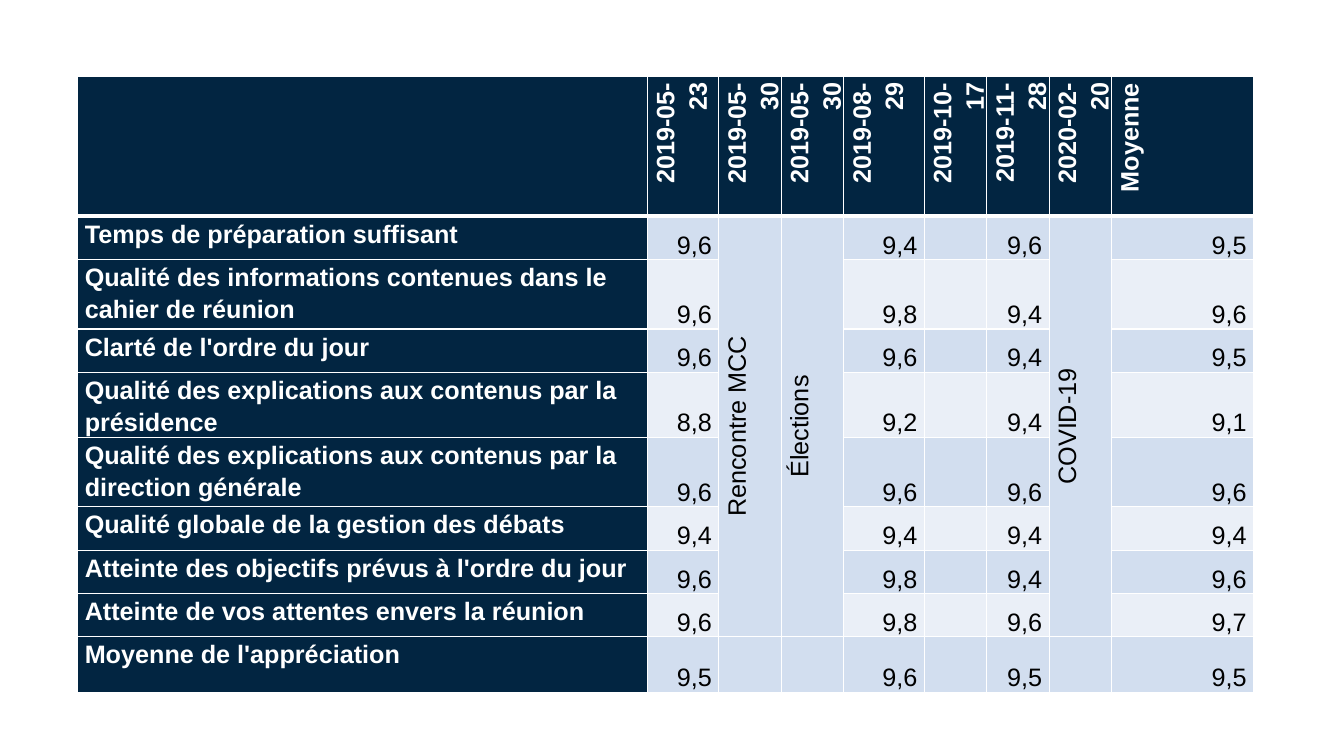
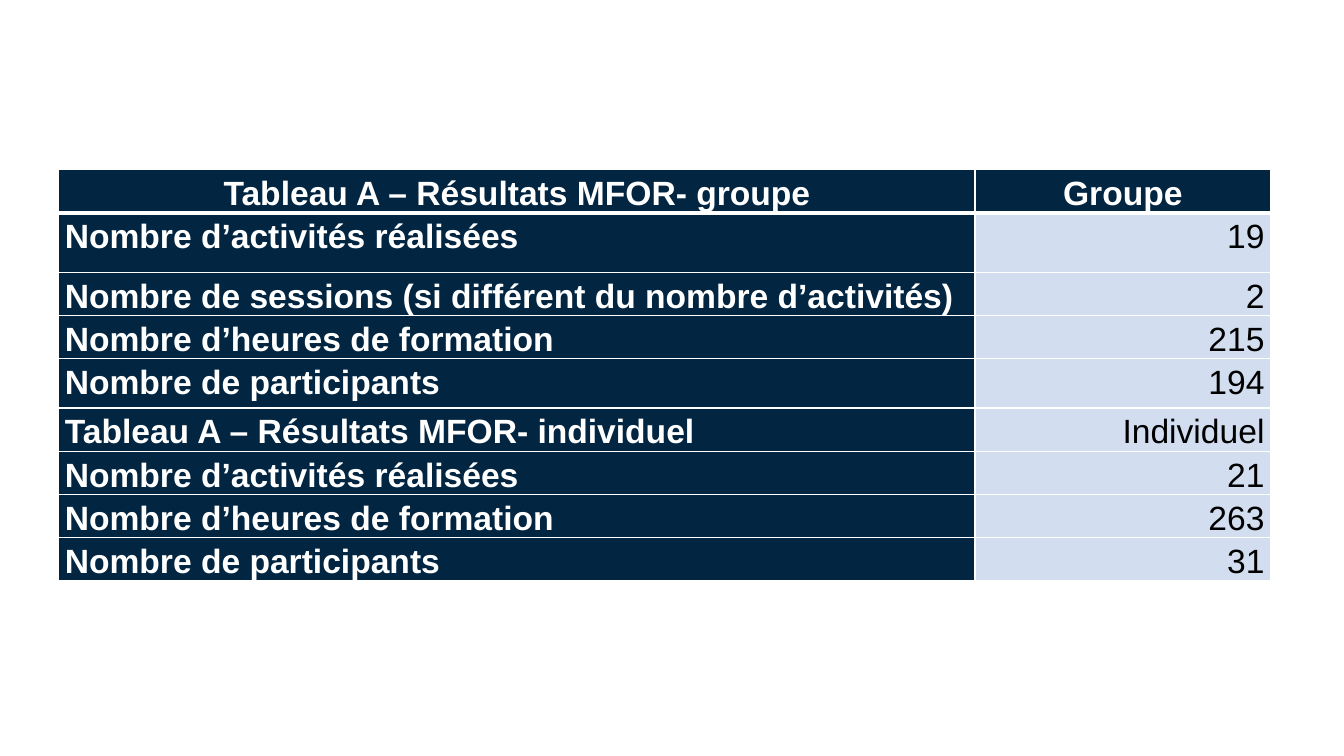
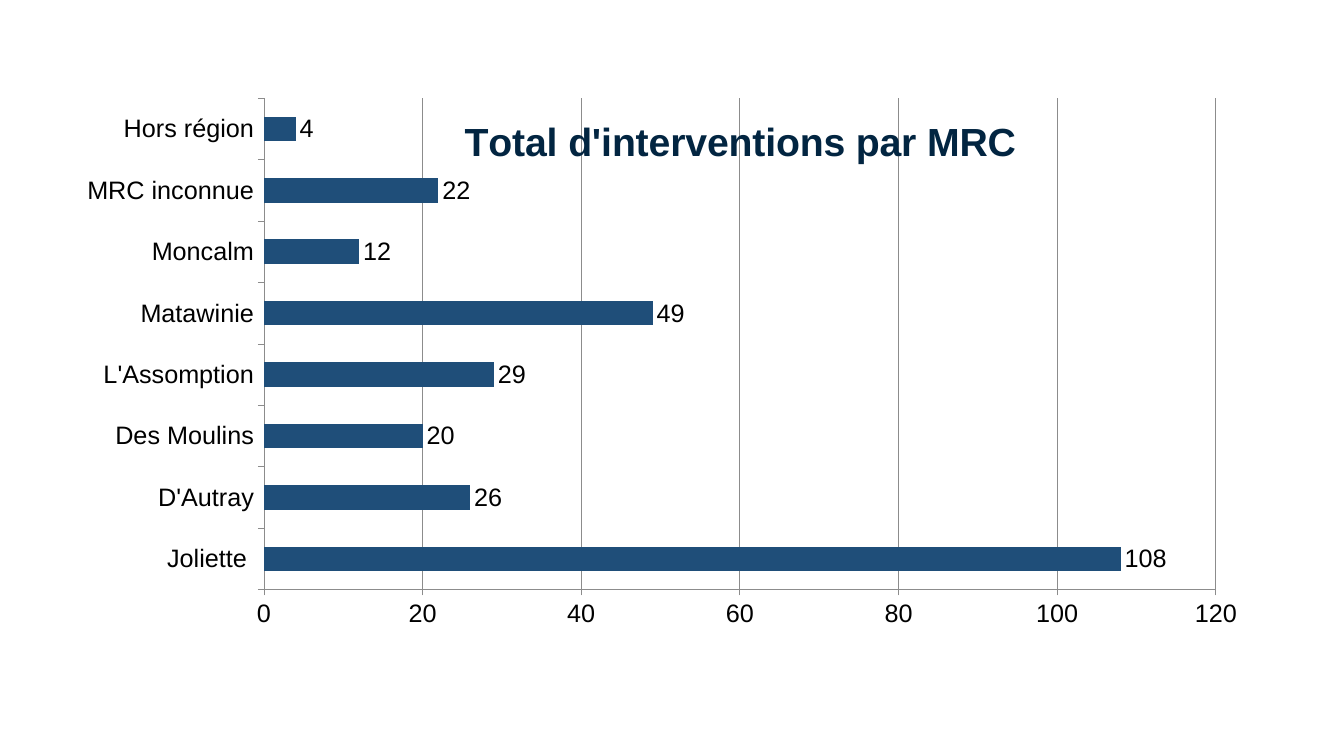
from dataclasses import dataclass

from lxml.etree import SubElement
from pptx import Presentation
from pptx.chart.data import CategoryChartData
from pptx.dml.color import RGBColor
from pptx.enum.chart import XL_CHART_TYPE, XL_LABEL_POSITION, XL_TICK_MARK
from pptx.enum.text import MSO_ANCHOR, PP_ALIGN
from pptx.oxml.ns import qn
from pptx.util import Pt


@dataclass(frozen=True)
class Theme:
    navy: str = "022541"
    blue: str = "1F4E79"
    band: str = "D2DEEF"
    pale: str = "EAEFF7"
    white: str = "FFFFFF"
    black: str = "000000"
    grey: str = "8C8C8C"
    font: str = "Arial"
    body: int = 18
    large: int = 24
    title: int = 28


theme = Theme()


def write(frame, text, size=theme.body, color=theme.black, bold=False,
          align=PP_ALIGN.LEFT, line=None, after=0):
    para = frame.paragraphs[0]
    para.alignment = align
    para.line_spacing = line
    para.space_after = Pt(after)
    run = para.add_run()
    run.text = text
    run.font.name = theme.font
    run.font.size = Pt(size)
    run.font.bold = bold
    run.font.color.rgb = RGBColor.from_string(color)


def place(host, index, **box):
    """Give a chart part a manual layout, as fractions of the chart."""
    for old in host.findall(qn("c:layout")):
        host.remove(old)
    layout = SubElement(host, qn("c:layout"))
    host.insert(index, layout)
    manual = SubElement(layout, qn("c:manualLayout"))
    for key, val in box.items():
        SubElement(manual, qn(f"c:{key}")).set("val", str(val))


deck = Presentation()
deck.slide_width, deck.slide_height = Pt(960), Pt(540)
blank = deck.slide_layouts[6]

# Table contents
dates = ["2019-05-23", "2019-05-30", "2019-05-30", "2019-08-29",
         "2019-10-17", "2019-11-28", "2020-02-20"]
scores = [
    ("Temps de préparation suffisant", "9,6", "9,4", "9,6", "9,5"),
    ("Qualité des informations contenues dans le cahier de réunion",
     "9,6", "9,8", "9,4", "9,6"),
    ("Clarté de l'ordre du jour", "9,6", "9,6", "9,4", "9,5"),
    ("Qualité des explications aux contenus par la présidence",
     "8,8", "9,2", "9,4", "9,1"),
    ("Qualité des explications aux contenus par la direction générale",
     "9,6", "9,6", "9,6", "9,6"),
    ("Qualité globale de la gestion des débats", "9,4", "9,4", "9,4", "9,4"),
    ("Atteinte des objectifs prévus à l'ordre du jour",
     "9,6", "9,8", "9,4", "9,6"),
    ("Atteinte de vos attentes envers la réunion", "9,6", "9,8", "9,6", "9,7"),
    ("Moyenne de l'appréciation", "9,5", "9,6", "9,5", "9,5"),
]
events = {2: "Rencontre MCC", 3: "Élections", 7: "COVID-19"}
survey = [["", *dates, "Moyenne"]]
for label, may, august, november, mean in scores:
    survey.append([label, may, "", "", august, "", november, "", mean])
for col, event in events.items():
    survey[1][col] = event

training = [
    ("Tableau A – Résultats MFOR- groupe", "Groupe"),
    ("Nombre d’activités réalisées", "19"),
    ("Nombre de sessions (si différent du nombre d’activités)", "2"),
    ("Nombre d’heures de formation", "215"),
    ("Nombre de participants", "194"),
    ("Tableau A – Résultats MFOR- individuel", "Individuel"),
    ("Nombre d’activités réalisées", "21"),
    ("Nombre d’heures de formation", "263"),
    ("Nombre de participants", "31"),
]

tables = [
    dict(rows=survey, left=55.6, top=54.3, size=theme.body, pad=5,
         widths=[406.8, 51.1, 44.6, 44.6, 57.6, 44.6, 44.6, 44.6, 101.5],
         heights=[100, 31, 49.7, 31, 31, 49.7, 31, 31, 31, 39.6],
         bands=[theme.pale, theme.band], merged=events, upright=True,
         anchor=MSO_ANCHOR.BOTTOM, head=PP_ALIGN.RIGHT,
         side=PP_ALIGN.LEFT, after=(0, 0)),
    dict(rows=training, left=42, top=121.3, size=theme.large, pad=4.3,
         widths=[654.5, 211],
         heights=[27.4, 42.5, 27.4, 27.4, 35.3, 27.4, 27.4, 27.4, 27.4],
         bands=[theme.band, theme.band], merged={}, upright=False,
         anchor=MSO_ANCHOR.TOP, head=PP_ALIGN.CENTER,
         side=PP_ALIGN.JUSTIFY, after=(1, 10)),
]

# Slides 1 and 2: tables
for item in tables:
    rows, widths, heights = item["rows"], item["widths"], item["heights"]
    slide = deck.slides.add_slide(blank)
    table = slide.shapes.add_table(
        len(rows), len(widths), Pt(item["left"]), Pt(item["top"]),
        Pt(sum(widths)), Pt(sum(heights))).table
    table.horz_banding = False
    for column, width in zip(table.columns, widths):
        column.width = Pt(width)
    for row, height in zip(table.rows, heights):
        row.height = Pt(height)

    for r, texts in enumerate(rows):
        for c, text in enumerate(texts):
            cell = table.cell(r, c)
            event = r == 1 and c in item["merged"]
            dark = r == 0 or c == 0
            props = cell._tc.get_or_add_tcPr()
            for edge in ("lnL", "lnR", "lnT", "lnB"):
                thick = (r, edge) in ((0, "lnB"), (1, "lnT"))
                line = SubElement(props, qn(f"a:{edge}"),
                                  w=str(Pt(3 if thick else 1)))
                fill = SubElement(line, qn("a:solidFill"))
                SubElement(fill, qn("a:srgbClr"), val=theme.white)
            cell.fill.solid()
            cell.fill.fore_color.rgb = RGBColor.from_string(
                theme.navy if dark else item["bands"][r % 2])
            cell.margin_left = cell.margin_right = Pt(item["pad"])
            cell.margin_top = cell.margin_bottom = 0
            if not text:
                continue

            if event:
                anchor, align = MSO_ANCHOR.MIDDLE, PP_ALIGN.CENTER
            elif r == 0:
                anchor, align = item["anchor"], item["head"]
            elif c == 0:
                anchor, align = MSO_ANCHOR.TOP, item["side"]
            else:
                anchor, align = item["anchor"], PP_ALIGN.RIGHT
            cell.vertical_anchor = anchor
            if event or (r == 0 and item["upright"]):
                props.set("vert", "vert270")
            write(cell.text_frame, text, size=item["size"], bold=dark,
                  color=theme.white if dark else theme.black, align=align,
                  line=1.15, after=item["after"][r > 0 and c == 0])
    for c in item["merged"]:
        table.cell(1, c).merge(table.cell(8, c))

# Slide 3: bar chart
counts = {"Joliette ": 108, "D'Autray": 26, "Des Moulins": 20,
          "L'Assomption": 29, "Matawinie": 49, "Moncalm": 12,
          "MRC inconnue": 22, "Hors région": 4}
data = CategoryChartData()
data.categories = list(counts)
data.add_series("Series 1", list(counts.values()))
slide = deck.slides.add_slide(blank)
chart = slide.shapes.add_chart(
    XL_CHART_TYPE.BAR_CLUSTERED, Pt(34.6), Pt(70), Pt(859.7), Pt(417),
    data).chart
chart.has_legend = False
chart.font.name = theme.font
chart.font.size = Pt(theme.body)
chart.font.color.rgb = RGBColor.from_string(theme.black)

chart.has_title = True
title = chart.chart_title
write(title.text_frame, "Total d'interventions par MRC", size=theme.title,
      color=theme.navy, bold=True, align=PP_ALIGN.CENTER)
title._element.find(qn("c:overlay")).set("val", "1")
place(title._element, 1, xMode="edge", yMode="edge", x=0.34, y=0.02)
place(chart._chartSpace.chart.plotArea, 0, layoutTarget="inner",
      xMode="edge", yMode="edge", x=0.179, y=0, w=0.791, h=0.842)

plot = chart.plots[0]
plot.gap_width = 150
plot.vary_by_categories = False
bars = plot.series[0].format.fill
bars.solid()
bars.fore_color.rgb = RGBColor.from_string(theme.blue)
plot.has_data_labels = True
labels = plot.data_labels
labels.show_value = True
labels.position = XL_LABEL_POSITION.OUTSIDE_END
labels.font.name = theme.font
labels.font.size = Pt(theme.body)

scale = chart.value_axis
scale.minimum_scale, scale.maximum_scale, scale.major_unit = 0, 120, 20
scale.has_major_gridlines = True
for axis in (chart.category_axis, scale):
    axis.major_tick_mark = XL_TICK_MARK.OUTSIDE
    axis.minor_tick_mark = XL_TICK_MARK.NONE
    axis.tick_labels.font.name = theme.font
    axis.tick_labels.font.size = Pt(theme.body)
for part in (chart.category_axis, scale, scale.major_gridlines):
    part.format.line.width = Pt(0.5)
    part.format.line.color.rgb = RGBColor.from_string(theme.grey)

deck.save("out.pptx")
